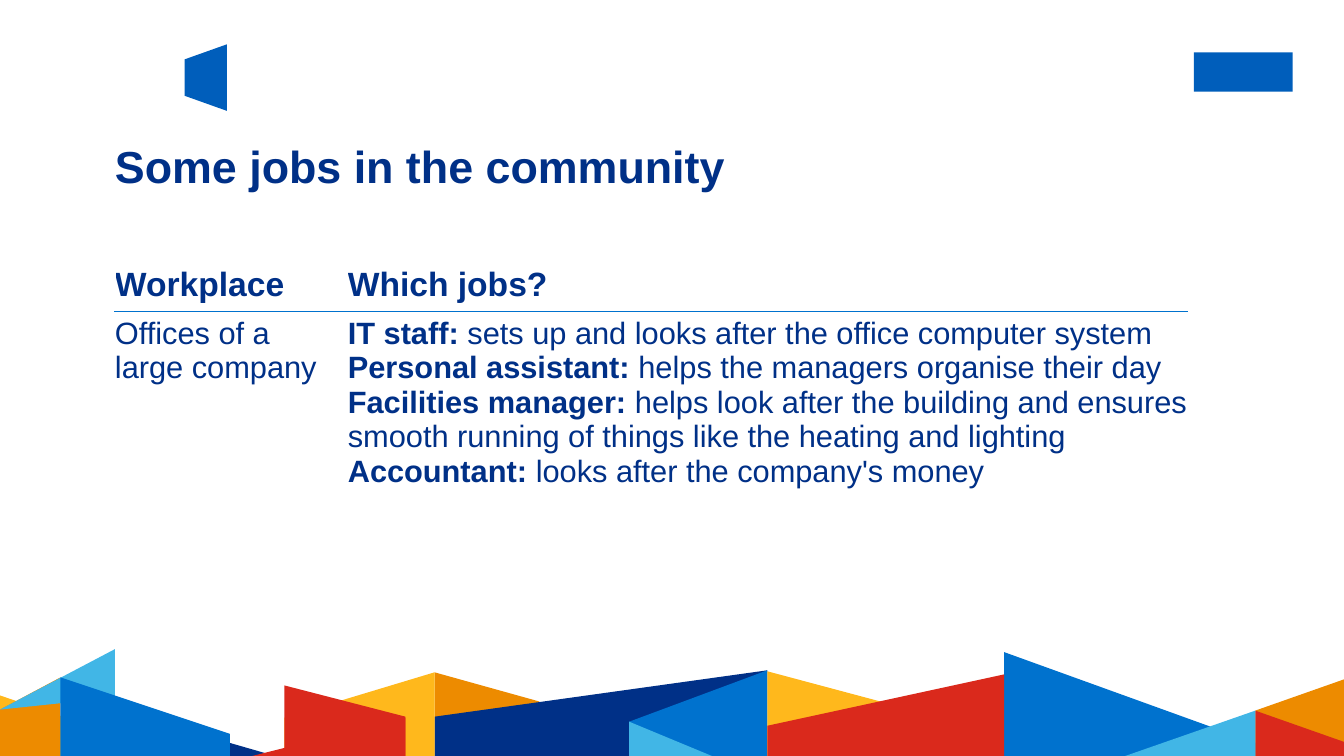
from lxml import etree
from pptx import Presentation
from pptx.dml.color import RGBColor
from pptx.enum import shapes, text
from pptx.oxml import ns
from pptx.util import Inches, Pt

NAVY = RGBColor(0x00, 0x30, 0x87)
BLUE = RGBColor(0x00, 0x72, 0xCE)
SKY = RGBColor(0x41, 0xB6, 0xE6)
AMBER = RGBColor(0xFF, 0xB8, 0x1C)
ORANGE = RGBColor(0xED, 0x8B, 0x00)
RED = RGBColor(0xDA, 0x29, 0x1C)
EMBLEM = RGBColor(0x00, 0x5E, 0xBB)
WHITE = RGBColor(0xFF, 0xFF, 0xFF)
FONT = "Arial"

WIDTH, HEIGHT = 13.33, 7.5
LEFT, CONTENT_WIDTH = 1.14, 10.64

TITLE = "Some jobs in the community"
HEADINGS = ["Workplace", "Which jobs?"]
WORKPLACE = "Offices of a\vlarge company"
JOBS = [
    ("IT staff: ", "sets up and looks after the office computer system"),
    ("Personal assistant: ", "helps the managers organise their day"),
    ("Facilities manager: ", "helps look after the building and ensures "
     "smooth running of things like the heating and lighting"),
    ("Accountant: ", "looks after the company's money"),
]
COLUMN_WIDTHS = [2.31, 8.33]
ROW_HEIGHTS = [0.46, 1.97]

DOOR = [(1.83, 0.59), (2.25, 0.44), (2.25, 1.1), (1.83, 0.95)]
BADGE = (11.84, 0.52, 0.98, 0.39)

FACETS = [
    (ORANGE, [(4.31, 6.67), (5.35, 6.96), (5.35, 7.21), (4.31, HEIGHT)]),
    (NAVY, [(4.31, 7.11), (7.61, 6.65), (7.61, HEIGHT), (4.31, HEIGHT)]),
    (ORANGE, [(12.45, 7.05), (WIDTH, 6.74), (WIDTH, HEIGHT), (12.45, HEIGHT)]),
    (AMBER, [(0, 6.9), (0.95, 7.22), (0.95, HEIGHT), (0, HEIGHT)]),
    (AMBER, [(2.82, 7.12), (4.31, 6.67), (4.31, HEIGHT), (2.82, HEIGHT)]),
    (ORANGE, [(0, 7.04), (0.6, 6.72), (0.6, HEIGHT), (0, HEIGHT)]),
    (RED, [(2.82, 6.8), (4.02, 7.11), (4.02, HEIGHT), (2.82, HEIGHT)]),
    (NAVY, [(1.76, 7.22), (2.73, HEIGHT), (1.76, HEIGHT)]),
    (RED, [(4.02, 7.12), (4.02, HEIGHT), (2.5, HEIGHT)]),
    (SKY, [(0, 7.04), (1.14, 6.44), (1.14, 6.92)]),
    (BLUE, [(0.6, 6.72), (2.28, 7.28), (2.28, HEIGHT), (0.6, HEIGHT)]),
    (BLUE, [(6.24, 7.16), (7.61, 6.65), (7.61, HEIGHT), (6.24, HEIGHT)]),
    (SKY, [(6.24, 7.16), (7.06, HEIGHT), (6.24, HEIGHT)]),
    (BLUE, [(9.96, 6.47), (12.45, 7.37), (12.45, HEIGHT), (9.96, HEIGHT)]),
    (RED, [(12.45, 7.05), (WIDTH, 7.36), (WIDTH, HEIGHT), (12.45, HEIGHT)]),
    (SKY, [(12.45, 7.05), (12.45, HEIGHT), (11.16, HEIGHT)]),
    (AMBER, [(7.61, 6.66), (8.92, 7.01), (8.92, HEIGHT), (7.61, HEIGHT)]),
    (RED, [(7.61, 7.2), (9.96, 6.69), (9.96, HEIGHT), (7.61, HEIGHT)]),
]


def paint(shape, color):
    shape.shadow.inherit = False
    shape.fill.solid()
    shape.fill.fore_color.rgb = color
    shape.line.fill.background()


def draw_facet(slide, color, corners):
    points = [(Inches(x), Inches(y)) for x, y in corners]
    builder = slide.shapes.build_freeform(*points[0])
    builder.add_line_segments(points[1:], close=True)
    paint(builder.convert_to_shape(), color)


def style(run, size, bold):
    run.font.name = FONT
    run.font.size = Pt(size)
    run.font.bold = bold
    run.font.color.rgb = NAVY


def border(cell, edges):
    properties = cell._tc.get_or_add_tcPr()
    for edge, color in zip(("lnL", "lnR", "lnT", "lnB"), edges):
        line = etree.SubElement(properties, ns.qn("a:" + edge), w=str(Pt(1)))
        fill = etree.SubElement(line, ns.qn("a:solidFill"))
        etree.SubElement(fill, ns.qn("a:srgbClr"), val=str(color))


def add_title(slide):
    title = slide.shapes.add_textbox(
        Inches(LEFT), Inches(1.44), Inches(CONTENT_WIDTH), Inches(0.6))
    frame = title.text_frame
    frame.word_wrap = True
    frame.vertical_anchor = text.MSO_ANCHOR.TOP
    frame.margin_left = frame.margin_right = 0
    frame.margin_top = frame.margin_bottom = 0
    frame.text = TITLE
    frame.paragraphs[0].line_spacing = 0.9
    style(frame.paragraphs[0].runs[0], 32, True)


def add_jobs_table(slide):
    jobs = slide.shapes.add_table(
        2, 2, Inches(LEFT), Inches(2.59),
        Inches(CONTENT_WIDTH), Inches(sum(ROW_HEIGHTS))).table
    jobs.first_row = jobs.horz_banding = False
    for column, width in zip(jobs.columns, COLUMN_WIDTHS):
        column.width = Inches(width)
    for row, height in zip(jobs.rows, ROW_HEIGHTS):
        row.height = Inches(height)

    row_edges = [(WHITE, WHITE, WHITE, BLUE), (WHITE, WHITE, BLUE, WHITE)]
    for row, edges in zip(jobs.rows, row_edges):
        for cell in row.cells:
            border(cell, edges)
            cell.fill.background()
            cell.margin_left = cell.margin_right = 0
            cell.margin_top = cell.margin_bottom = Inches(0.05)

    for column, heading in enumerate(HEADINGS):
        frame = jobs.cell(0, column).text_frame
        frame.text = heading
        style(frame.paragraphs[0].runs[0], 24, True)

    workplace = jobs.cell(1, 0).text_frame
    workplace.text = WORKPLACE
    for run in workplace.paragraphs[0].runs:
        style(run, 22, False)

    duties = jobs.cell(1, 1).text_frame
    for index, (role, duty) in enumerate(JOBS):
        paragraph = duties.add_paragraph() if index else duties.paragraphs[0]
        for words, bold in ((role, True), (duty, False)):
            run = paragraph.add_run()
            run.text = words
            style(run, 22, bold)


def main():
    deck = Presentation()
    deck.slide_width, deck.slide_height = Inches(WIDTH), Inches(HEIGHT)
    slide = deck.slides.add_slide(deck.slide_layouts[6])
    draw_facet(slide, EMBLEM, DOOR)
    badge = slide.shapes.add_shape(
        shapes.MSO_SHAPE.RECTANGLE, *[Inches(length) for length in BADGE])
    paint(badge, EMBLEM)
    for color, corners in FACETS:
        draw_facet(slide, color, corners)
    add_title(slide)
    add_jobs_table(slide)
    deck.save("out.pptx")


if __name__ == "__main__":
    main()
